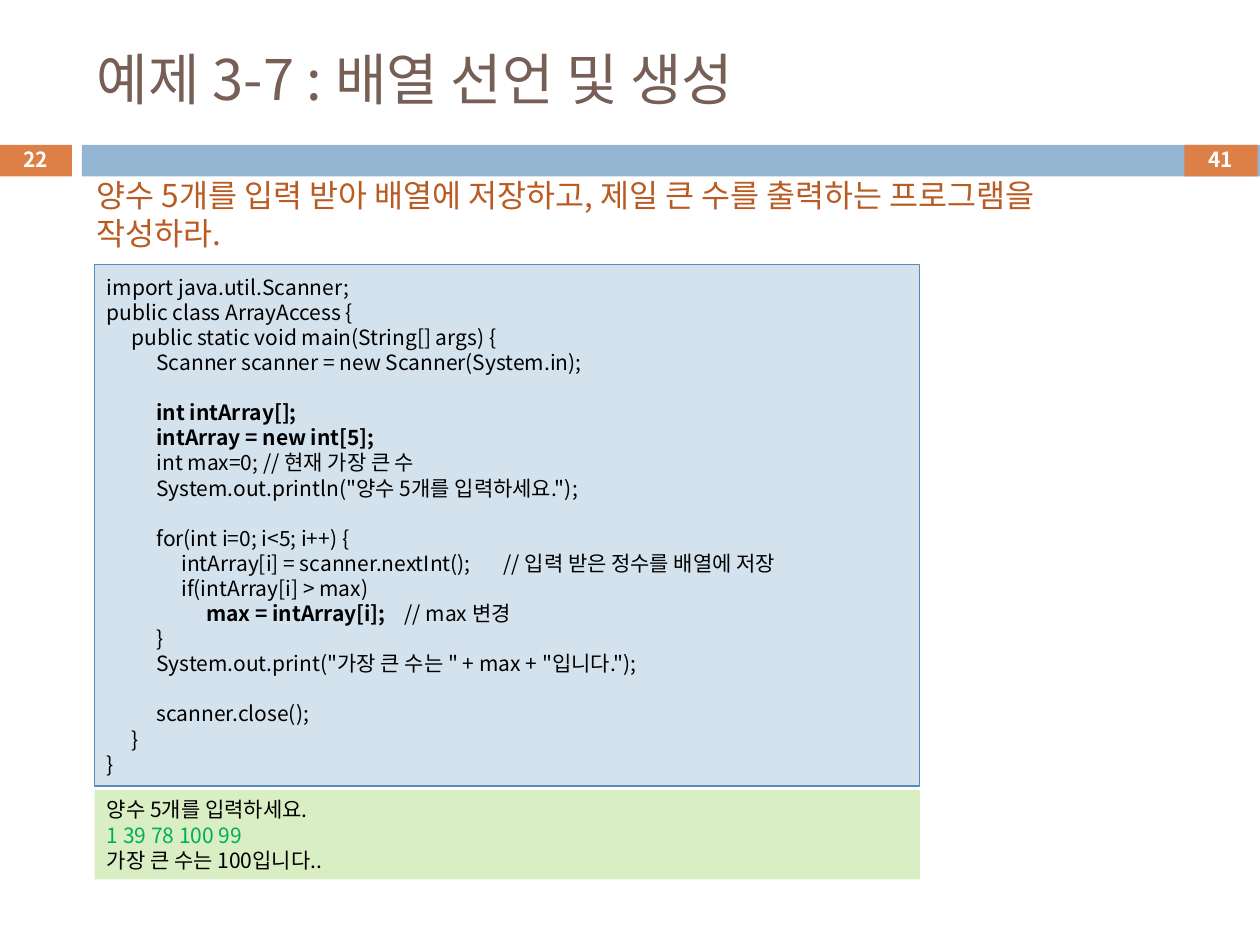
from lxml.etree import SubElement
from pptx import Presentation
from pptx.dml.color import RGBColor
from pptx.enum.shapes import MSO_SHAPE
from pptx.enum.text import MSO_ANCHOR, PP_ALIGN
from pptx.oxml.ns import qn
from pptx.util import Pt

FONT = "Noto Sans CJK KR"
TAB = 14.17
ORANGE, BLUE, WHITE, BLACK = "DD8047", "94B6D2", "FFFFFF", "000000"

TITLE = "예제 3-7 : 배열 선언 및 생성"
TASK = "양수 5개를 입력 받아 배열에 저장하고, 제일 큰 수를 출력하는 프로그램을 작성하라."
# Text between asterisk pairs is bold.
CODE = [
    "import java.util.Scanner;",
    "public class ArrayAccess {",
    "\tpublic static void main(String[] args) {",
    "\t\tScanner scanner = new Scanner(System.in);",
    "",
    "\t\t**int intArray[];**",
    "\t\t**intArray = new int[5];**",
    "\t\tint max=0; // 현재 가장 큰 수",
    '\t\tSystem.out.println("양수 5개를 입력하세요.");',
    "",
    "\t\tfor(int i=0; i<5; i++) {",
    "\t\t\tintArray[i] = scanner.nextInt(); \t\t// 입력 받은 정수를 배열에 저장",
    "\t\t\tif(intArray[i] > max)",
    "\t\t\t\t**max = intArray[i]; **\t// max 변경",
    "\t\t}",
    '\t\tSystem.out.print("가장 큰 수는 " + max + "입니다.");',
    "",
    "\t\tscanner.close();",
    "\t}",
    "}",
]
OUTPUT = [
    ("양수 5개를 입력하세요.", BLACK),
    ("1 39 78 100 99", "00B050"),
    ("가장 큰 수는 100입니다..", BLACK),
]
BANDS = [(-0.7, 41.8, ORANGE), (46.8, 673.2, BLUE), (676.8, 41.8, ORANGE)]
PAGE_NUMBERS = [(-0.7, "22"), (676.8, "41")]


def rgb(value):
    return RGBColor.from_string(value)


def add_rect(box, fill, line=None):
    sp = s.shapes.add_shape(MSO_SHAPE.RECTANGLE, *map(Pt, box))
    sp.shadow.inherit = False
    sp.fill.solid()
    sp.fill.fore_color.rgb = rgb(fill)
    if line:
        sp.line.color.rgb = rgb(line)
        sp.line.width = Pt(0.75)
    else:
        sp.line.fill.background()
    return sp


def add_text_box(box):
    tf = s.shapes.add_textbox(*map(Pt, box)).text_frame
    tf.word_wrap = True
    return tf


def format_paragraph(p, size, color, align=PP_ALIGN.LEFT, bold=None):
    p.alignment = align
    p.font.size = Pt(size)
    p.font.bold = bold
    p.font.color.rgb = rgb(color)
    p.font.name = FONT
    SubElement(p._p.pPr.find(qn("a:defRPr")), qn("a:ea"), typeface=FONT)


def add_lines(tf, lines, size=12):
    """Write (text, colour) lines with evenly spaced tab stops."""
    for i, (text, color) in enumerate(lines):
        p = tf.add_paragraph() if i else tf.paragraphs[0]
        p.line_spacing = Pt(size * 1.196)
        stops = SubElement(p._p.get_or_add_pPr(), qn("a:tabLst"))
        for n in range(1, 21):
            SubElement(stops, qn("a:tab"), pos=str(Pt(n * TAB)), algn="l")
        format_paragraph(p, size, color)
        for j, part in enumerate(text.split("**")):
            if part:
                r = p.add_run()
                r.text = part
                if j % 2:
                    r.font.bold = True
        if not text:
            SubElement(p._p, qn("a:endParaRPr"), sz=str(size * 100))


prs = Presentation()
prs.slide_width, prs.slide_height = Pt(720), Pt(540)
s = prs.slides.add_slide(prs.slide_layouts[5])

for left, width, color in BANDS:
    add_rect((left, 82.8, width, 18), color)

title = s.shapes.title
title.left, title.top, title.width, title.height = map(Pt, (48.2, 18, 642.2, 53.3))
title.text_frame.text = TITLE
title.text_frame.vertical_anchor = MSO_ANCHOR.MIDDLE
format_paragraph(title.text_frame.paragraphs[0], 32, "775F55")

add_lines(add_text_box((48.2, 97.2, 615.6, 51.1)), [(TASK, "B95B22")], 18)

code = add_rect((54, 151.2, 471.6, 298), "D4E2ED", "558BB8")
add_lines(code.text_frame, [(line, BLACK) for line in CODE])
result = add_rect((54, 451.4, 471.6, 51.1), "DAEEC4")
add_lines(result.text_frame, OUTPUT)

for left, number in PAGE_NUMBERS:
    tf = add_text_box((left, 81.4, 41.8, 19.4))
    tf.vertical_anchor = MSO_ANCHOR.MIDDLE
    tf.text = number
    format_paragraph(tf.paragraphs[0], 11.9, WHITE, PP_ALIGN.CENTER, True)

prs.save("out.pptx")
